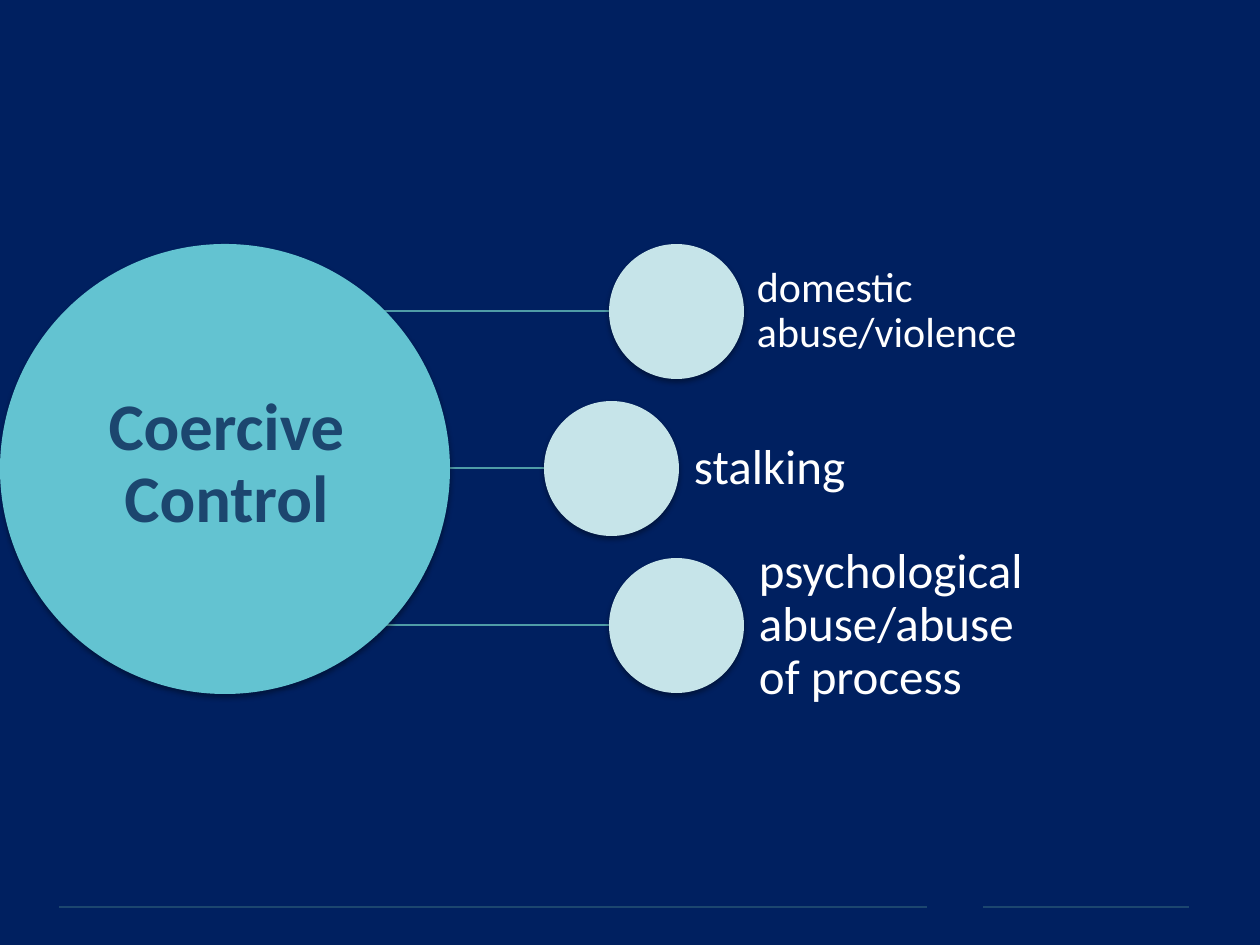
import lxml.etree
import pptx
import pptx.dml.color
import pptx.enum.shapes
import pptx.enum.text
import pptx.oxml
import pptx.oxml.ns
import pptx.util

PX = 914400 / 126
COLORS = {"navy": "002060", "rule": "1C466F", "link": "4F9CA7",
          "hub": "63C3D1", "node": "C6E4E9", "white": "FFFFFF"}
SHADOW = (
    '<a:effectLst xmlns:a="http://schemas.openxmlformats.org/drawingml/2006/main">'
    '<a:outerShdw blurRad="39370" dist="22860" dir="5400000" rotWithShape="0">'
    '<a:srgbClr val="000000"><a:alpha val="35000"/></a:srgbClr>'
    '</a:outerShdw></a:effectLst>'
)
ANCHOR = pptx.enum.text.MSO_ANCHOR
ALIGN = pptx.enum.text.PP_ALIGN


def px(*values):
    return [pptx.util.Emu(round(v * PX)) for v in values]


def rgb(name):
    return pptx.dml.color.RGBColor.from_string(COLORS[name])


prs = pptx.Presentation()
prs.slide_width, prs.slide_height = px(1260, 945)
s = prs.slides.add_slide(prs.slide_layouts[6])
s.background.fill.solid()
s.background.fill.fore_color.rgb = rgb("navy")

hub_size, node_size = 450, 135
top = 244
hub_center = hub_size // 2
step = (hub_size - node_size) // 2
nodes = [
    (609, "domestic abuse/violence", 290, 24, 13),
    (544, "stalking", 189, 28, 15),
    (609, "psychological abuse/abuse of process", 299, 28, 15),
]

lines = [(983, 1189, 907, "rule", 1), (59, 927, 907, "rule", 1)]
for i, node in enumerate(nodes):
    lines.append((hub_center, node[0] + node_size // 2,
                  top + node_size // 2 + i * step, "link", 0.75))
for x1, x2, y, color, width in lines:
    line = s.shapes.add_connector(pptx.enum.shapes.MSO_CONNECTOR.STRAIGHT, *px(x1, y, x2, y))
    line.line.color.rgb = rgb(color)
    line.line.width = pptx.util.Pt(width)
    lxml.etree.SubElement(line._element.spPr, pptx.oxml.ns.qn("a:effectLst"))

circles = [(0, top, hub_size, "hub")]
labels = [(83, 388, 287, 149, "Coercive Control", 38, 0, "rule", True, ANCHOR.BOTTOM, ALIGN.CENTER)]
for i, (x, text, width, size, inset) in enumerate(nodes):
    y = top + i * step
    circles.append((x, y, node_size, "node"))
    labels.append((x + node_size, y, width, node_size, text, size, inset,
                   "white", False, ANCHOR.MIDDLE, ALIGN.LEFT))

for x, y, size, color in circles:
    sp = s.shapes.add_shape(pptx.enum.shapes.MSO_SHAPE.OVAL, *px(x, y, size, size))
    sp.fill.solid()
    sp.fill.fore_color.rgb = rgb(color)
    sp.line.fill.background()
    sp._element.spPr.append(pptx.oxml.parse_xml(SHADOW))

for x, y, w, h, text, size, inset, color, bold, anchor, align in labels:
    tf = s.shapes.add_textbox(*px(x, y, w, h)).text_frame
    tf.word_wrap = True
    tf.vertical_anchor = anchor
    tf.margin_left, tf.margin_top, tf.margin_right, tf.margin_bottom = px(inset, 0, inset, 0)
    p = tf.paragraphs[0]
    p.alignment = align
    p.line_spacing = 0.9
    r = p.add_run()
    r.text = text
    r.font.name = "Calibri"
    r.font.size = pptx.util.Pt(size)
    r.font.bold = bold
    r.font.color.rgb = rgb(color)

prs.save("out.pptx")
